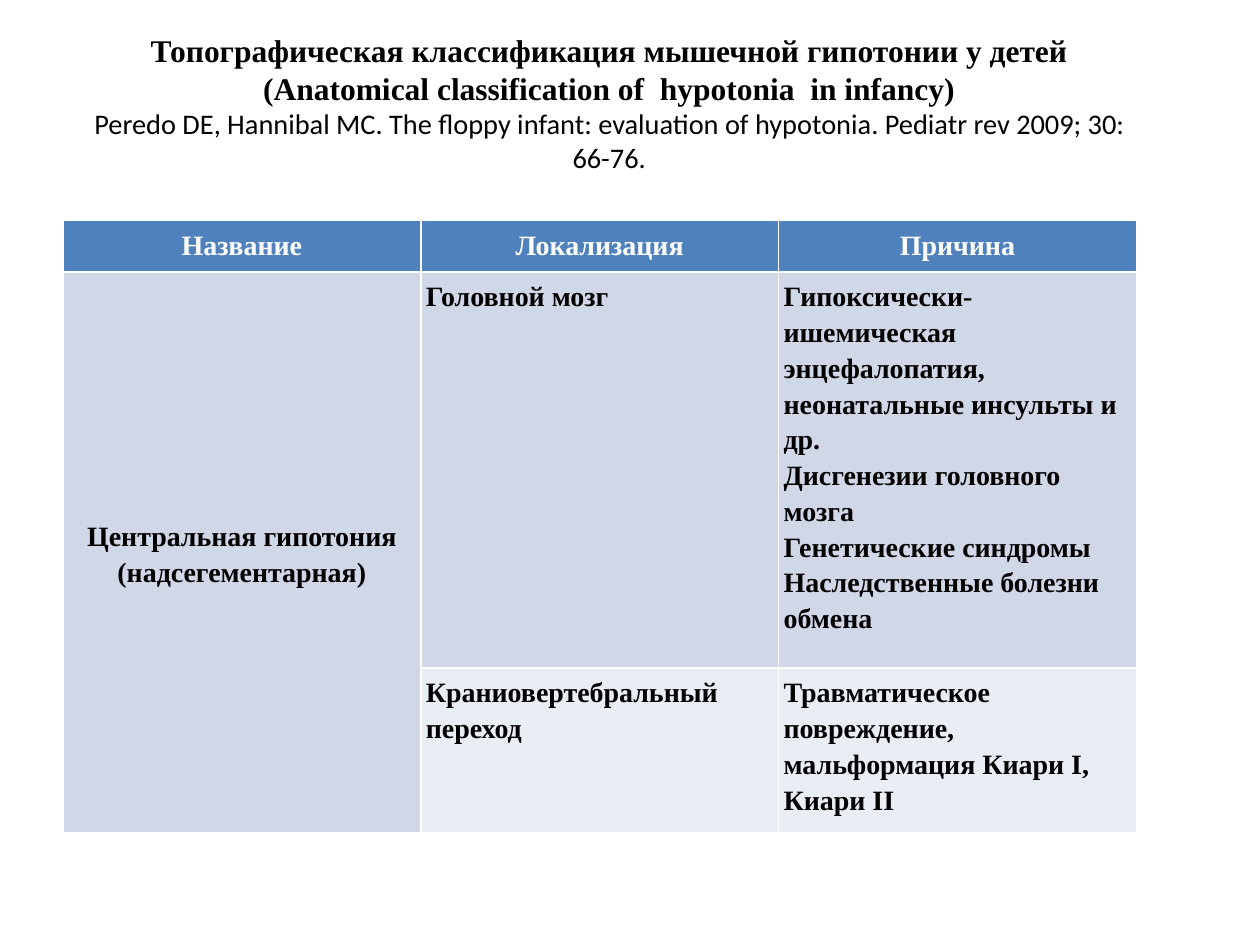
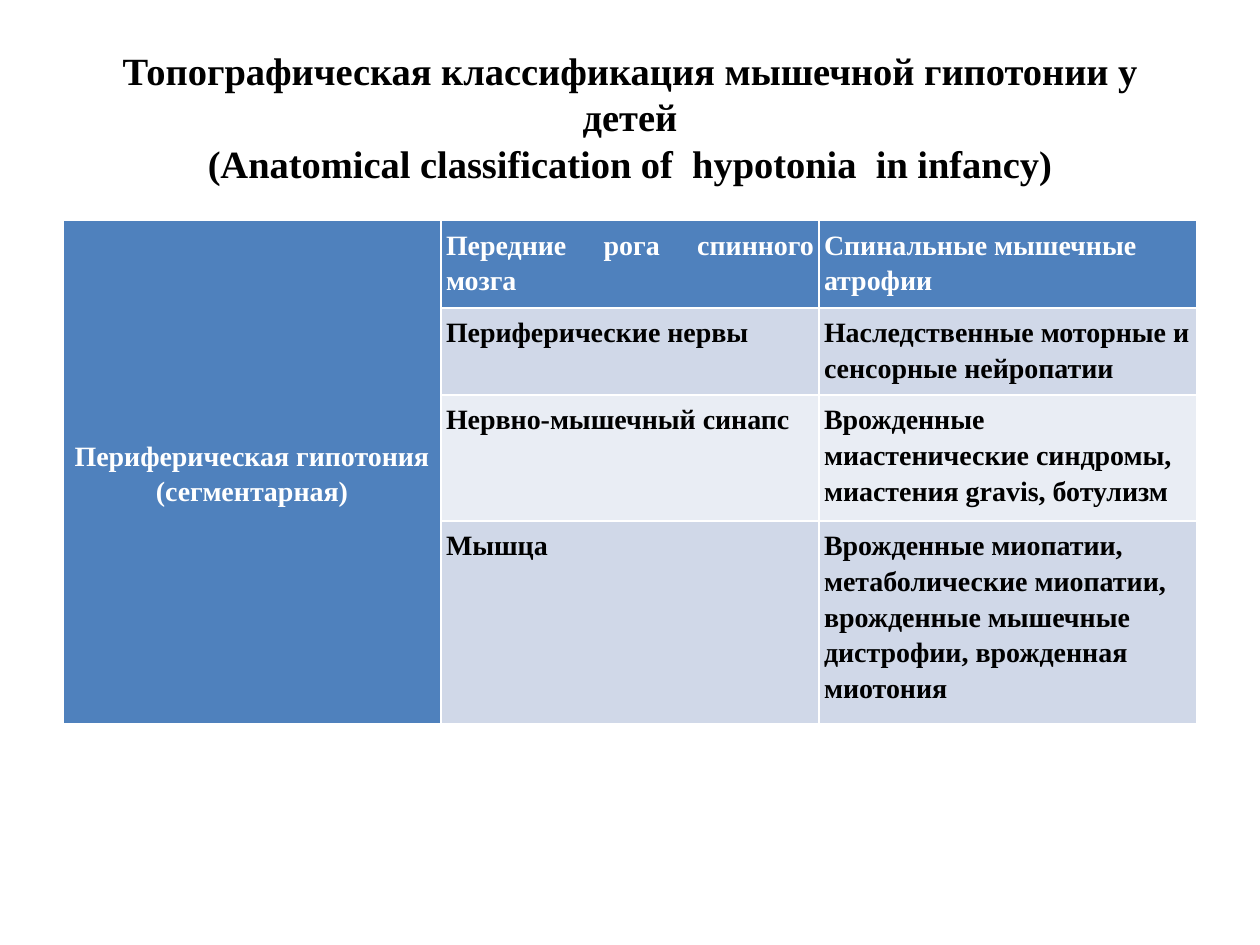
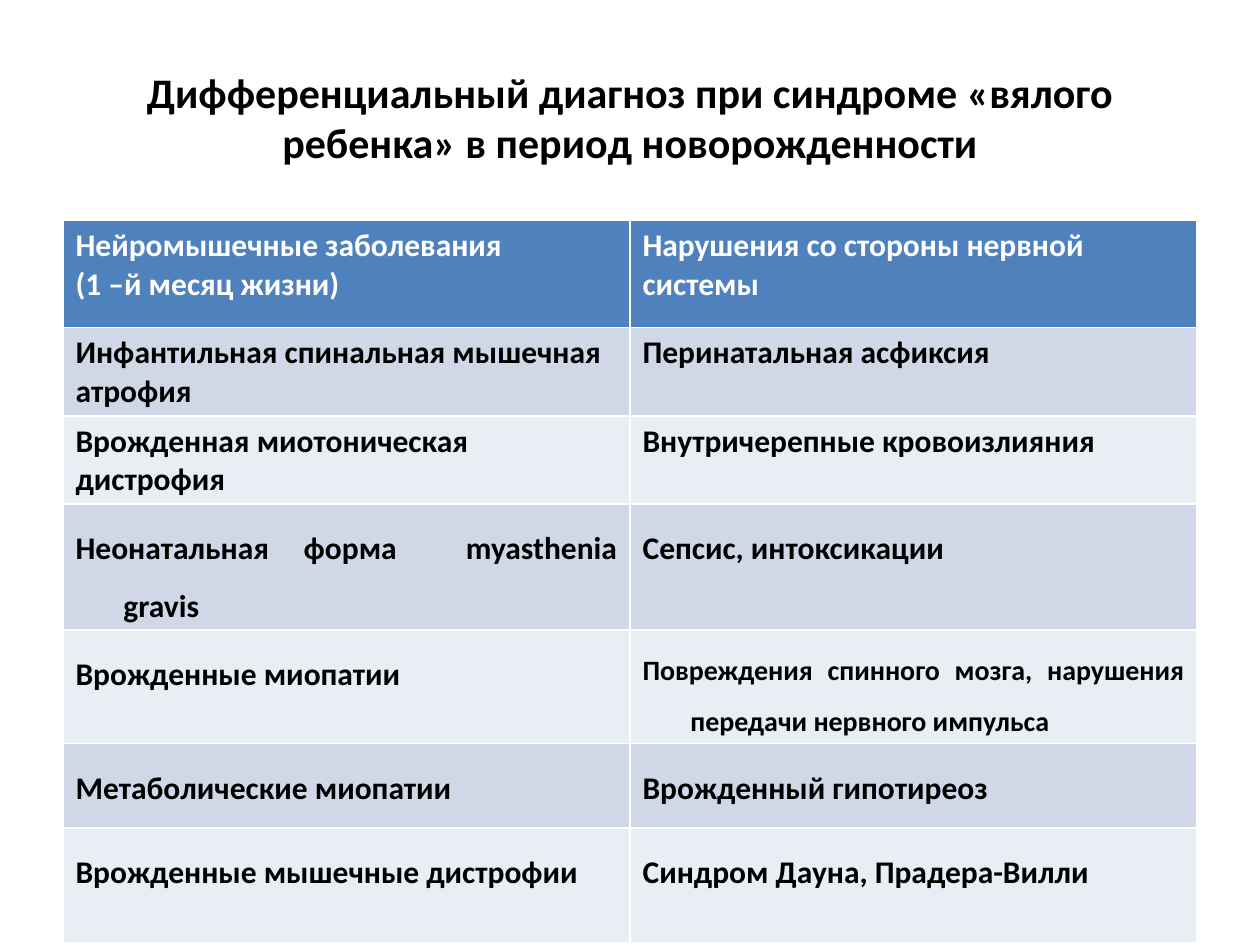
from pptx import Presentation
from pptx.dml.color import RGBColor
from pptx.enum.text import MSO_ANCHOR, PP_ALIGN
from pptx.util import Inches, Pt

LEFT, MID, JUST = PP_ALIGN.LEFT, PP_ALIGN.CENTER, PP_ALIGN.JUSTIFY
MIDDLE = MSO_ANCHOR.MIDDLE
SERIF, SANS = "Times New Roman", "Calibri"
COLORS = {"head": "4F81BD", "odd": "D0D8E8", "even": "E9EDF4",
          "light": "FFFFFF", "dark": "000000"}
EDGE, TITLE_TOP, TABLE_TOP = 0.5, 0.3, 1.75

TOPIC = "Топографическая классификация мышечной гипотонии у детей"
ENGLISH = "(Anatomical classification of  hypotonia  in infancy)"
SOURCE = ("Peredo DE, Hannibal MC. The floppy infant: evaluation of hypotonia. "
          "Pediatr rev 2009; 30: 66-76.")

# Title lines are (text, size, font, bold); None marks a cell covered by a merge.
SLIDES = [
    {
        "title": [(TOPIC, 18, SERIF, True), (ENGLISH, 18, SERIF, True),
                  (SOURCE, 16.2, SANS, False)],
        "width": 8.67, "foot": 0.27,
        "font": SERIF, "size": 16, "pad": 0.04, "space": 1.15,
        "cols": [2.84] * 3, "heights": [0.41] * 3,
        "aligns": [MID, JUST, LEFT], "head": MID, "merge": (1, 2),
        "rows": [
            ["Название", "Локализация", "Причина"],
            ["Центральная гипотония (надсегементарная)", "Головной мозг",
             "Гипоксически-ишемическая энцефалопатия, неонатальные инсульты и др.\n"
             "Дисгенезии головного мозга\n"
             "Генетические синдромы\n"
             "Наследственные болезни обмена"],
            [None, "Краниовертебральный переход",
             "Травматическое повреждение, мальформация Киари I, Киари II"],
        ],
    },
    {
        "title": [(TOPIC, 22, SERIF, True), (ENGLISH, 22, SERIF, True)],
        "font": SERIF, "size": 16, "pad": 0.04, "space": 1.15,
        "cols": [3] * 3, "heights": [0.41] * 4,
        "aligns": [MID, JUST, LEFT], "merge": (0, 3),
        "rows": [
            ["Периферическая гипотония\n(сегментарная)",
             "Передние рога спинного мозга", "Спинальные мышечные атрофии"],
            [None, "Периферические нервы",
             "Наследственные моторные и сенсорные нейропатии"],
            [None, "Нервно-мышечный синапс",
             "Врожденные миастенические синдромы, миастения gravis, ботулизм"],
            [None, "Мышца",
             "Врожденные миопатии, метаболические миопатии, "
             "врожденные мышечные дистрофии, врожденная миотония"],
        ],
    },
    {
        "title": [("Дифференциальный диагноз при синдроме «вялого ребенка» "
                   "в период новорожденности", 24, SANS, True)],
        "font": SANS, "size": 18,
        "cols": [4.5] * 2,
        "heights": [0.85, 0.67, 0.67, 0.57, 0.57, 0.67, 0.91],
        "aligns": [LEFT, LEFT], "hang": 3, "small": (4, 1),
        "rows": [
            ["Нейромышечные заболевания\n(1 –й месяц жизни)",
             "Нарушения со стороны нервной системы"],
            ["Инфантильная спинальная мышечная атрофия", "Перинатальная асфиксия"],
            ["Врожденная миотоническая дистрофия", "Внутричерепные кровоизлияния"],
            ["Неонатальная форма  myasthenia gravis", "Сепсис, интоксикации"],
            ["Врожденные миопатии",
             "Повреждения спинного мозга, нарушения передачи нервного импульса"],
            ["Метаболические миопатии", "Врожденный гипотиреоз"],
            ["Врожденные мышечные дистрофии", "Синдром Дауна, Прадера-Вилли"],
        ],
    },
]


def add_run(para, text, size, font, color, bold=True):
    run = para.add_run()
    run.text = text
    run.font.size, run.font.name, run.font.bold = Pt(size), font, bold
    run.font.color.rgb = RGBColor.from_string(COLORS[color])


def fill_cell(cell, text, data, row, col):
    """Give a cell its band colour, insets and styled paragraphs."""
    band = "head" if row == 0 else "odd" if row % 2 else "even"
    cell.fill.solid()
    cell.fill.fore_color.rgb = RGBColor.from_string(COLORS[band])
    if "pad" in data:
        pad = Inches(data["pad"])
        cell.margin_left = cell.margin_right = pad
        cell.margin_top = cell.margin_bottom = pad
    align = data["aligns"][col]
    if row == 0:
        align = data.get("head", align)
    hang = row >= data.get("hang", len(data["rows"]))
    size = 16 if data.get("small") == (row, col) else data["size"]
    frame = cell.text_frame
    for num, line in enumerate(text.split("\n")):
        para = frame.add_paragraph() if num else frame.paragraphs[0]
        para.alignment = JUST if hang else align
        para.line_spacing = 1.5 if hang else data.get("space", 1.0)
        if hang:
            props = para._p.get_or_add_pPr()
            props.set("marL", str(Inches(0.38)))
            props.set("indent", str(-Inches(0.38)))
        add_run(para, line, size, data["font"], "dark" if row else "light")


deck = Presentation()
deck.slide_width, deck.slide_height = Inches(10), Inches(7.5)
blank = deck.slide_layouts[6]

for data in SLIDES:
    slide = deck.slides.add_slide(blank)

    box = slide.shapes.add_textbox(Inches(EDGE), Inches(TITLE_TOP),
                                   Inches(data.get("width", 9)), Inches(1.25))
    frame = box.text_frame
    frame.word_wrap = True
    frame.vertical_anchor = MIDDLE
    frame.margin_bottom = Inches(data.get("foot", 0.05))
    para = frame.paragraphs[0]
    para.alignment = MID
    for num, (text, size, font, bold) in enumerate(data["title"]):
        if num:
            para.add_line_break()
        add_run(para, text, size, font, "dark", bold)

    rows, cols, heights = data["rows"], data["cols"], data["heights"]
    table = slide.shapes.add_table(
        len(rows), len(cols), Inches(EDGE), Inches(TABLE_TOP),
        Inches(sum(cols)), Inches(sum(heights))).table
    for num, width in enumerate(cols):
        table.columns[num].width = Inches(width)
    for num, height in enumerate(heights):
        table.rows[num].height = Inches(height)
    for row, texts in enumerate(rows):
        for col, text in enumerate(texts):
            if text is not None:
                fill_cell(table.cell(row, col), text, data, row, col)
    if "merge" in data:
        first, last = data["merge"]
        group = table.cell(first, 0)
        group.merge(table.cell(last, 0))
        group.vertical_anchor = MIDDLE

deck.save("out.pptx")
